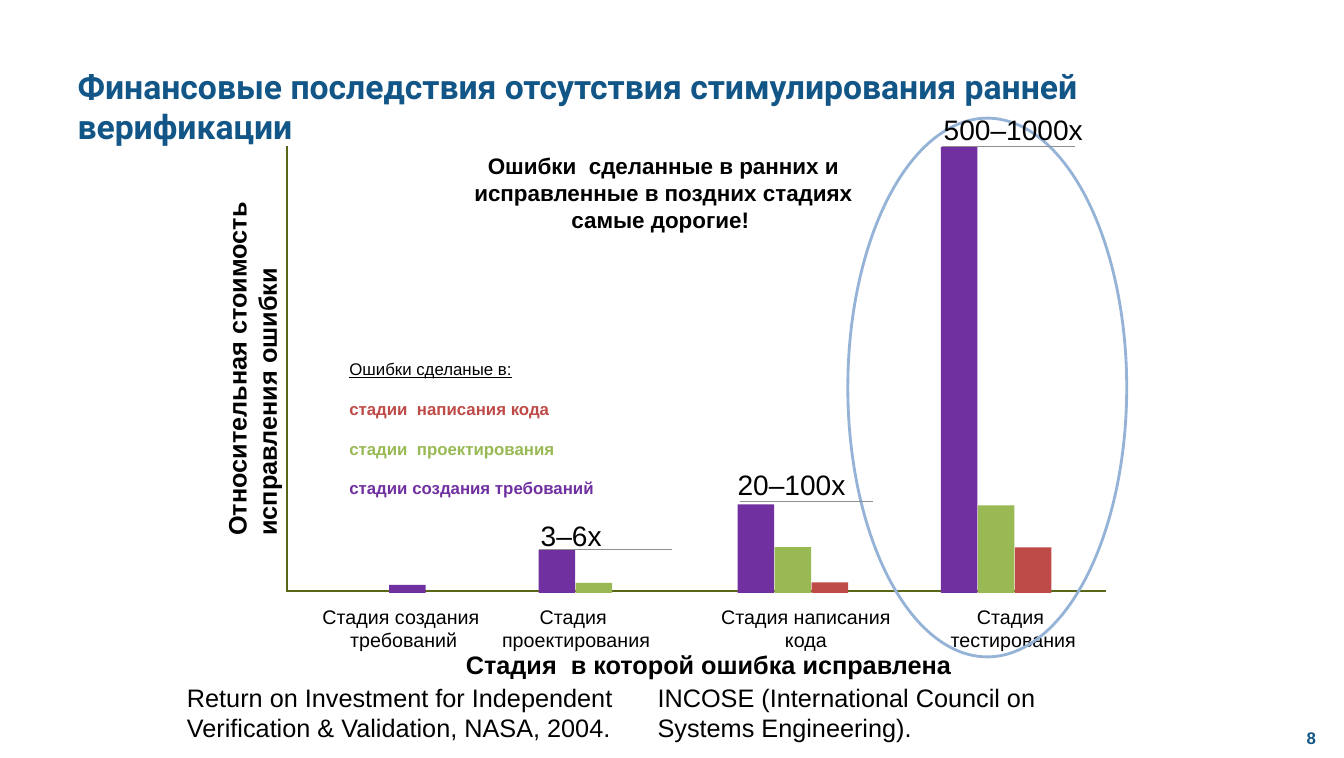
from typing import NamedTuple

from lxml import etree
from pptx import Presentation
from pptx import util as u
from pptx.dml.color import RGBColor
from pptx.enum import shapes, text
from pptx.oxml.ns import qn

NAVY, BLACK, OLIVE = "125687", "000000", "596615"
PURPLE, GREEN, RED = "7030A0", "98B954", "BE4B48"
RULE_GREY, OVAL_BLUE = "8F8F8F", "95B3D7"

BASELINE = 14.9
BAR_WIDTH, BAR_PITCH = 0.92, 0.93
RULE_LENGTH = 3.35
LEGEND_TOP, LEGEND_STEP = 8.89, 1.0

LEFT, CENTER = text.PP_ALIGN.LEFT, text.PP_ALIGN.CENTER
NO_INSETS = {f"margin_{side}": 0 for side in ("left", "top", "right", "bottom")}
NO_WRAP = {"word_wrap": False}


class Box(NamedTuple):
    """Position and size in centimetres."""
    left: float
    top: float
    width: float
    height: float


class Stage(NamedTuple):
    caption: list[str]
    caption_left: float
    caption_width: float
    bars_left: float
    bar_heights: list[float]


class Callout(NamedTuple):
    label: str
    box: Box
    rule_left: float
    rule_top: float


class LegendEntry(NamedTuple):
    label: str
    color: str
    font: dict


STAGES = [
    Stage(["Стадия создания", " требований"], 8.1, 3.96, 9.78, [0.2]),
    Stage(["Стадия ", "проектирования"], 12.6, 3.76, 13.54, [1.08, 0.25]),
    Stage(["Стадия написания", "кода"], 18.11, 4.29, 18.54, [2.22, 1.15, 0.26]),
    Stage(["Стадия", " тестирования"], 23.75, 3.3, 23.65, [11.2, 2.2, 1.14]),
]
CALLOUTS = [
    Callout("3–6x", Box(13.34, 12.9, 2.06, 1.12), 13.54, 13.82),
    Callout("20–100x", Box(18.29, 11.63, 3.25, 1.12), 18.59, 12.6),
    Callout("500–1000x", Box(23.47, 2.69, 4.04, 1.12), 23.67, 3.68),
]
LEGEND = [
    LegendEntry("Ошибки сделаные в:", BLACK, {"underline": True}),
    LegendEntry("стадии  написания кода", RED, {"bold": True}),
    LegendEntry("стадии  проектирования", GREEN, {"bold": True}),
    LegendEntry("стадии создания требований", PURPLE, {"bold": True}),
]
SOURCES = [
    ("Return on Investment for Independent Verification & Validation, NASA, 2004.", 4.45),
    ("INCOSE (International Council on Systems Engineering).", 16.28),
]
AXES = [Box(7.21, 3.68, 0.03, 11.15), Box(7.21, 14.83, 20.57, 0.03)]


def rgb(color: str) -> RGBColor:
    return RGBColor.from_string(color)


def to_cm(lengths: tuple[float, ...]) -> list[u.Cm]:
    return [u.Cm(length) for length in lengths]


def apply(target, values: dict) -> None:
    for name, value in values.items():
        setattr(target, name, value)


def add_text(slide, lines: list[str], box: Box, size: float, color: str = BLACK,
             align=LEFT, font: dict | None = None, frame: dict | None = None):
    textbox = slide.shapes.add_textbox(*to_cm(box))
    body = textbox.text_frame
    apply(body, {"word_wrap": True, **(frame or {})})
    for index, line in enumerate(lines):
        paragraph = body.add_paragraph() if index else body.paragraphs[0]
        paragraph.text = line
        paragraph.alignment = align
        apply(paragraph.font, {"name": "Arial", "size": u.Pt(size), **(font or {})})
        paragraph.font.color.rgb = rgb(color)
    return textbox


def add_figure(slide, kind, box: Box, fill: str | None = None,
               line: str | None = None, line_width: float = 0) -> None:
    """Add a preset shape; a missing colour means no fill or no outline."""
    figure = slide.shapes.add_shape(kind, *to_cm(box))
    figure.shadow.inherit = False
    if fill:
        figure.fill.solid()
        figure.fill.fore_color.rgb = rgb(fill)
    else:
        figure.fill.background()
    if line:
        figure.line.color.rgb = rgb(line)
        figure.line.width = u.Pt(line_width)
    else:
        figure.line.fill.background()


def add_callout(slide, callout: Callout) -> None:
    left, top = callout.rule_left, callout.rule_top
    rule = slide.shapes.add_connector(
        shapes.MSO_CONNECTOR.STRAIGHT,
        *to_cm((left, top, left + RULE_LENGTH, top)))
    rule.line.color.rgb = rgb(RULE_GREY)
    rule.line.width = u.Pt(0.75)
    etree.SubElement(rule._element.spPr, qn("a:effectLst"))
    add_text(slide, [callout.label], callout.box, 20, frame=NO_WRAP)


def add_bars(slide, stage: Stage) -> None:
    for index, (height, color) in enumerate(zip(stage.bar_heights, (PURPLE, GREEN, RED))):
        bar = Box(stage.bars_left + index * BAR_PITCH, BASELINE - height, BAR_WIDTH, height)
        add_figure(slide, shapes.MSO_SHAPE.RECTANGLE, bar, fill=color)


def main() -> None:
    deck = Presentation()
    deck.slide_width, deck.slide_height = u.Cm(33.78), u.Cm(19.05)
    slide = deck.slides.add_slide(deck.slide_layouts[6])
    bold = {"bold": True}
    tight = {**NO_INSETS, **NO_WRAP}

    add_text(slide, ["8"], Box(32.11, 18.01, 1.7, 1.07), 12, NAVY, CENTER, bold,
             {"vertical_anchor": text.MSO_ANCHOR.MIDDLE})
    add_text(slide, ["Финансовые последствия отсутствия стимулирования ранней верификации"],
             Box(1.7, 1.52, 29.85, 2.11), 24, NAVY, font={"name": "Roboto", **bold})

    for axis in AXES:
        add_figure(slide, shapes.MSO_SHAPE.RECTANGLE, axis, fill=OLIVE, line=OLIVE)
    for stage in STAGES:
        add_text(slide, stage.caption, Box(stage.caption_left, 15.19, stage.caption_width, 1.19),
                 14, align=CENTER, frame=tight)
    cost_title = add_text(slide, ["Относительная стоимость", "исправления ошибки"],
                          Box(2.01, 8.36, 8.66, 1.55), 18, font=bold, frame=tight)
    cost_title.rotation = 270
    add_text(slide, ["Стадия  в которой ошибка исправлена"],
             Box(11.71, 16.33, 12.34, 0.76), 18, font=bold, frame=tight)

    add_text(slide, ["Ошибки  сделанные в ранних и исправленные в поздних стадиях самые дорогие! "],
             Box(11.33, 3.71, 10.69, 2.31), 16, align=CENTER, font=bold)
    add_figure(slide, shapes.MSO_SHAPE.OVAL, Box(21.31, 2.97, 7.01, 13.54),
               line=OVAL_BLUE, line_width=2)

    for stage in STAGES:
        add_bars(slide, stage)
    for index, entry in enumerate(LEGEND):
        add_text(slide, [entry.label], Box(8.53, LEGEND_TOP + index * LEGEND_STEP, 7.11, 0.71),
                 12, entry.color, font=entry.font)
    for citation, left in SOURCES:
        add_text(slide, [citation], Box(left, 17.02, 12.24, 1.8), 18)
    for callout in CALLOUTS:
        add_callout(slide, callout)

    deck.save("out.pptx")


if __name__ == "__main__":
    main()
